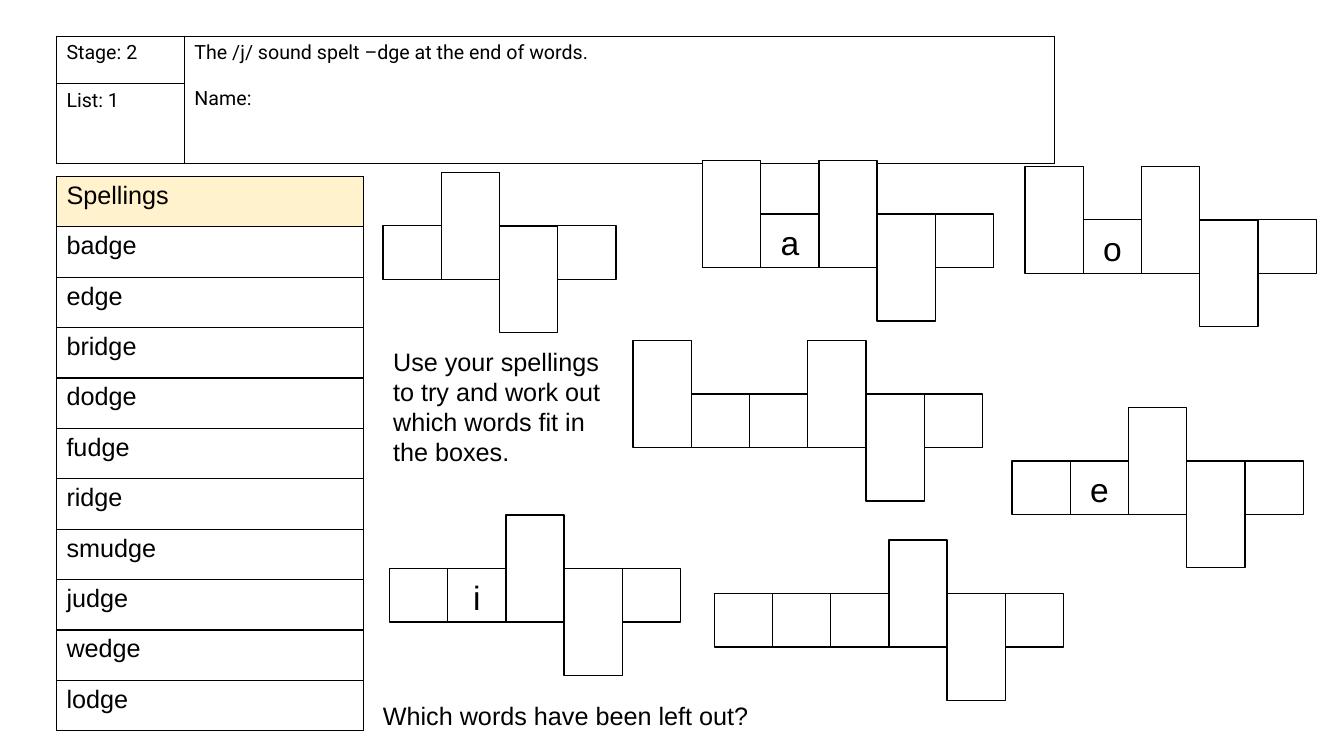
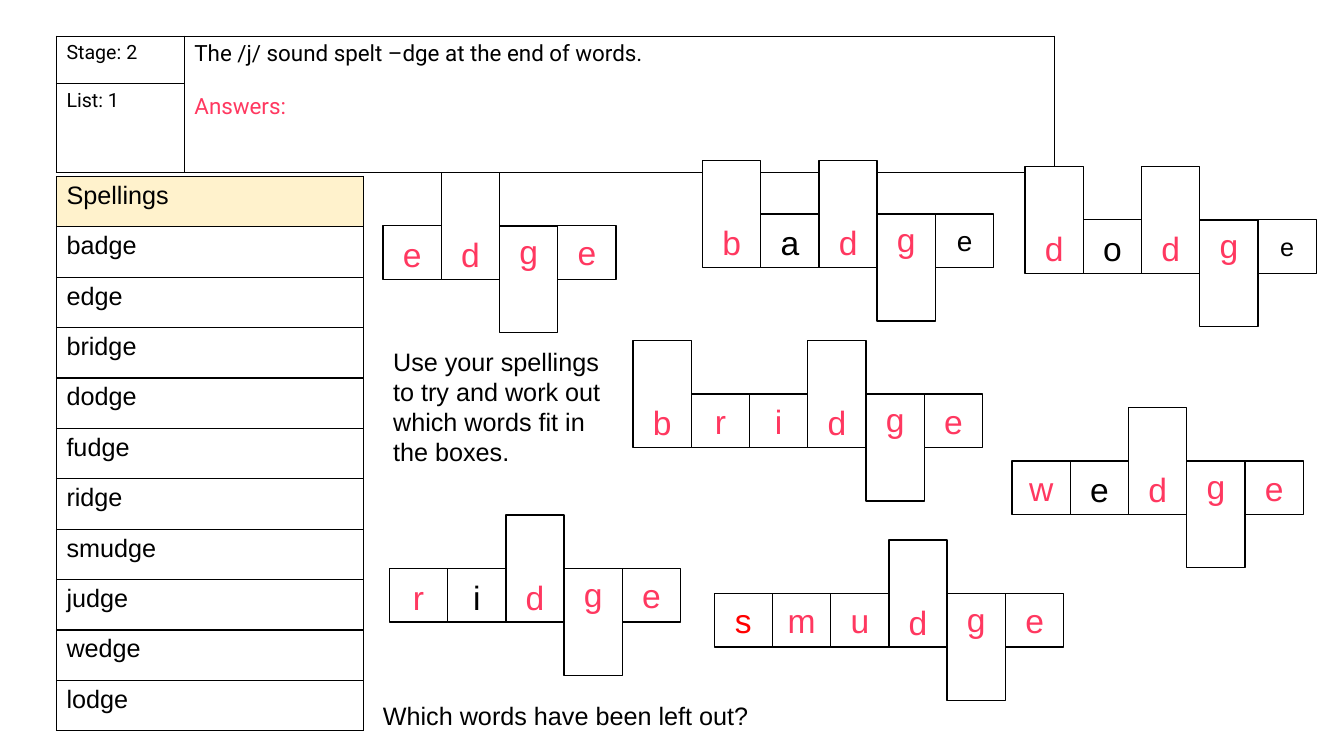
from dataclasses import dataclass

from lxml.etree import SubElement
from pptx import Presentation
from pptx.dml.color import RGBColor
from pptx.enum.shapes import MSO_SHAPE as Preset
from pptx.enum.text import MSO_ANCHOR as Anchor, MSO_AUTO_SIZE as AutoSize, PP_ALIGN as Align
from pptx.oxml.ns import qn
from pptx.util import Pt

INK = RGBColor(0x00, 0x00, 0x00)
PAPER = RGBColor(0xFF, 0xFF, 0xFF)
CREAM = RGBColor(0xFF, 0xF2, 0xCC)
PINK = RGBColor(0xFF, 0x38, 0x60)
RED = RGBColor(0xFF, 0x00, 0x00)

BODY_FONT = "Arial"
HEADER_FONT = "Roboto"
TITLE_ONLY = 5

BOX_WIDTH = 41.6
BOX_HEIGHT = 38.2
ASCENDERS = "bd"
DESCENDERS = "g"

HEADER_BOX = (40.3, 25.9, 712.8, 68)
LIST_BOX = (40.3, 126, 219.6, 396)
TASK_BOX = (273.6, 243.4, 177.1, 116.6)
QUESTION_BOX = (266.4, 496.8, 623.5, 28.8)

SPELLINGS = ["badge", "edge", "bridge", "dodge", "fudge",
             "ridge", "smudge", "judge", "wedge", "lodge"]


@dataclass
class Puzzle:
    word: str
    left: float
    top: float
    given: int = -1


PUZZLES = [
    Puzzle("edge", 273.6, 161.3),
    Puzzle("badge", 501.8, 152.8, given=1),
    Puzzle("dodge", 732.2, 157, given=1),
    Puzzle("bridge", 452.2, 281.5),
    Puzzle("wedge", 722.9, 329.2, given=1),
    Puzzle("ridge", 278.2, 406.1, given=1),
    Puzzle("smudge", 510.2, 424),
]
LETTER_STYLES = {
    ("badge", 4): (20, INK),
    ("dodge", 4): (18, INK),
    ("smudge", 0): (24, RED),
}
LOW_LETTERS = {("edge", 0), ("ridge", 0)}


def points(*lengths):
    return [Pt(length) for length in lengths]


def add_span(para, text, size, color=INK, font=BODY_FONT):
    span = para.add_run()
    span.text = text
    span.font.size = Pt(size)
    span.font.name = font
    span.font.color.rgb = color


def border_cell(cell):
    properties = cell._tc.get_or_add_tcPr()
    for index, side in enumerate(("lnL", "lnR", "lnT", "lnB")):
        line = SubElement(properties, qn(f"a:{side}"), w=str(Pt(1)))
        fill = SubElement(line, qn("a:solidFill"))
        SubElement(fill, qn("a:srgbClr"), val=str(INK))
        properties.insert(index, line)


def add_grid(page, box, rows, widths):
    table = page.shapes.add_table(rows, len(widths), *points(*box)).table
    table.first_row = False
    table.horz_banding = False
    for column, width in zip(table.columns, widths):
        column.width = Pt(width)
    for row in table.rows:
        row.height = Pt(box[3] / rows)
        for cell in row.cells:
            cell.fill.background()
            border_cell(cell)
    return table


def add_header(page, box, label, size, color):
    label_width = 91.4
    table = add_grid(page, box, 2, [label_width, box[2] - label_width])
    for row, text in enumerate(("Stage: 2", "List: 1")):
        add_span(table.cell(row, 0).text_frame.paragraphs[0], text, 14, font=HEADER_FONT)
    topic = table.cell(0, 1)
    topic.merge(table.cell(1, 1))
    frame = topic.text_frame
    add_span(frame.paragraphs[0], "The /j/ sound spelt –dge at the end of words.",
             size, font=HEADER_FONT)
    para = frame.add_paragraph()
    para.space_before = Pt(round(size * 1.17, 1))
    add_span(para, label, size, color, HEADER_FONT)


def add_spelling_list(page, box):
    entries = ["Spellings", *SPELLINGS]
    table = add_grid(page, box, len(entries), [box[2]])
    for row, text in enumerate(entries):
        add_span(table.cell(row, 0).text_frame.paragraphs[0], text, 18)
    heading = table.cell(0, 0)
    heading.fill.solid()
    heading.fill.fore_color.rgb = CREAM


def add_letter_box(page, puzzle, index, answered):
    letter = puzzle.word[index]
    tall = letter in ASCENDERS + DESCENDERS
    top = puzzle.top - BOX_HEIGHT * (letter in ASCENDERS)
    height = BOX_HEIGHT * (2 if tall else 1)
    box = page.shapes.add_shape(
        Preset.RECTANGLE,
        *points(puzzle.left + index * BOX_WIDTH, top, BOX_WIDTH, height))
    box.shadow.inherit = False
    box.fill.solid()
    box.fill.fore_color.rgb = PAPER
    box.line.color.rgb = INK
    box.line.width = Pt(1)
    given = index == puzzle.given
    if not (given or answered):
        return
    key = (puzzle.word, index)
    frame = box.text_frame
    if letter in DESCENDERS:
        frame.vertical_anchor = Anchor.TOP
    elif letter in ASCENDERS or given or key in LOW_LETTERS:
        frame.vertical_anchor = Anchor.BOTTOM
    else:
        frame.vertical_anchor = Anchor.MIDDLE
    para = frame.paragraphs[0]
    para.alignment = Align.CENTER
    size, color = LETTER_STYLES.get(key, (24, INK if given else PINK))
    add_span(para, letter, size, color)


def add_puzzle(page, puzzle, answered):
    for index in range(len(puzzle.word)):
        add_letter_box(page, puzzle, index, answered)


def fill_text(shape, box, text):
    shape.left, shape.top, shape.width, shape.height = points(*box)
    frame = shape.text_frame
    frame.word_wrap = True
    frame.auto_size = AutoSize.NONE
    frame.vertical_anchor = Anchor.TOP
    para = frame.paragraphs[0]
    para.alignment = Align.LEFT
    add_span(para, text, 18)


def add_worksheet(deck, label, size=14, color=INK, answered=False):
    page = deck.slides.add_slide(deck.slide_layouts[TITLE_ONLY])
    fill_text(page.shapes.title, TASK_BOX,
              "Use your spellings to try and work out which words fit in the boxes.")
    add_spelling_list(page, LIST_BOX)
    add_header(page, HEADER_BOX, label, size, color)
    for puzzle in PUZZLES:
        add_puzzle(page, puzzle, answered)
    question = page.shapes.add_textbox(*points(*QUESTION_BOX))
    fill_text(question, QUESTION_BOX, "Which words have been left out?")


def main():
    deck = Presentation()
    deck.slide_width, deck.slide_height = points(960, 540)
    add_worksheet(deck, "Name:")
    add_worksheet(deck, "Answers:", size=16, color=PINK, answered=True)
    deck.save("out.pptx")


if __name__ == "__main__":
    main()
